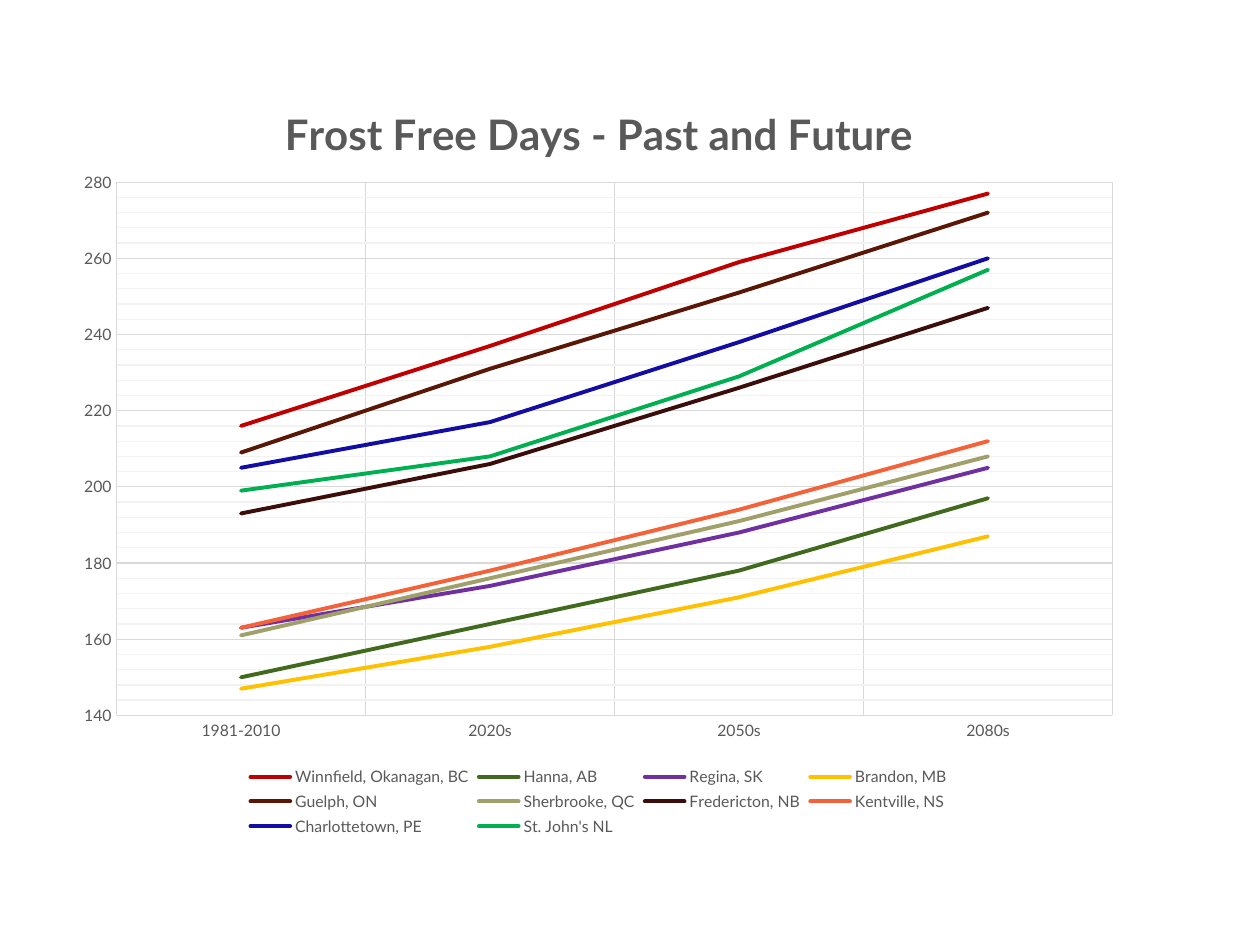
from copy import deepcopy
from lxml import etree
from pptx import Presentation
from pptx.chart.data import CategoryChartData as Data
from pptx.dml.color import RGBColor
from pptx.enum.chart import XL_CHART_TYPE as Kind, XL_LEGEND_POSITION as Side
from pptx.enum.chart import XL_TICK_MARK as Tick
from pptx.oxml.ns import qn
from pptx.util import Inches, Pt

FONT = "Lato"
GREY, RULE, FAINT = "595959", "D9D9D9", "F2F2F2"
ERAS = ["1981-2010", "2020s", "2050s", "2080s"]
TOWNS = [
    ("Winnfield, Okanagan, BC", "C00000", (216, 237, 259, 277)),
    ("Hanna, AB", "426A1F", (150, 164, 178, 197)),
    ("Regina, SK", "7030A0", (163, 174, 188, 205)),
    ("Brandon, MB", "FFC000", (147, 158, 171, 187)),
    ("Guelph, ON", "5A1705", (209, 231, 251, 272)),
    ("Sherbrooke, QC", "A0A16A", (161, 176, 191, 208)),
    ("Fredericton, NB", "3B0E0C", (193, 206, 226, 247)),
    ("Kentville, NS", "F4623A", (163, 178, 194, 212)),
    ("Charlottetown, PE", "140DA3", (205, 217, 238, 260)),
    ("St. John's NL", "00B050", (199, 208, 229, 257)),
]


def hue(code):
    return RGBColor.from_string(code)


def style(font, size, bold=False):
    font.name, font.size, font.bold = FONT, Pt(size), bold
    font.color.rgb = hue(GREY)


def stroke(line, code, width=0.75):
    line.color.rgb = hue(code)
    line.width = Pt(width)


def place(parent, index, **parts):
    for old in parent.findall(qn("c:layout")):
        parent.remove(old)
    layout = etree.Element(qn("c:layout"))
    manual = etree.SubElement(layout, qn("c:manualLayout"))
    for tag, value in parts.items():
        etree.SubElement(manual, qn("c:" + tag)).set("val", str(value))
    parent.insert(index, layout)


def set_title(chart):
    title = chart.chart_title
    title.include_in_layout = False
    para = title.text_frame.paragraphs[0]
    para.text = "Frost Free Days - Past and Future"
    style(para.runs[0].font, 24, True)
    place(title._element, 1, xMode="edge", yMode="edge", x=0.2, y=0.05)


def add_minor(axis):
    axis.has_minor_gridlines = True
    major, minor = (axis._element.find(qn(f"c:{rank}Gridlines"))
                    for rank in ("major", "minor"))
    look = deepcopy(major.find(qn("c:spPr")))
    look.find(".//" + qn("a:srgbClr")).set("val", FAINT)
    minor.append(look)


def set_axes(chart):
    cat, val = chart.category_axis, chart.value_axis
    for axis in (cat, val):
        axis.major_tick_mark = axis.minor_tick_mark = Tick.NONE
        axis.has_major_gridlines = True
        stroke(axis.major_gridlines.format.line, RULE)
        style(axis.tick_labels.font, 9)
    stroke(cat.format.line, RULE)
    val.format.line.fill.background()
    val.minimum_scale, val.maximum_scale = 140, 280
    val.major_unit, val.minor_unit = 20, 4
    add_minor(val)


def set_lines(chart):
    for line, (_, code, _) in zip(chart.plots[0].series, TOWNS):
        line.smooth = False
        stroke(line.format.line, code, 2.25)
        line.format.line._get_or_add_ln().set("cap", "rnd")


def set_legend(chart):
    chart.has_legend = True
    chart.legend.position = Side.BOTTOM
    chart.legend.include_in_layout = False
    style(chart.legend.font, 9)


def add_frost(slide, left, top, width, height):
    data = Data()
    data.categories = ERAS
    for name, _, days in TOWNS:
        data.add_series(name, days)
    chart = slide.shapes.add_chart(Kind.LINE, left, top, width, height, data).chart
    style(chart.font, 10)
    chart.plots[0].vary_by_categories = False
    set_title(chart)
    set_axes(chart)
    set_lines(chart)
    set_legend(chart)
    area = chart._chartSpace.find(".//" + qn("c:plotArea"))
    place(area, 0, layoutTarget="inner", xMode="edge", yMode="edge",
          x=0.05, y=0.16, w=0.93, h=0.68)


def main():
    deck = Presentation()
    deck.slide_width, deck.slide_height = wide, high = Inches(10), Inches(7.5)
    slide = deck.slides.add_slide(deck.slide_layouts[6])
    add_frost(slide, int(wide * 0.05), int(high * 0.06),
              int(wide * 0.85), int(high * 0.83))
    deck.save("out.pptx")


if __name__ == "__main__":
    main()
